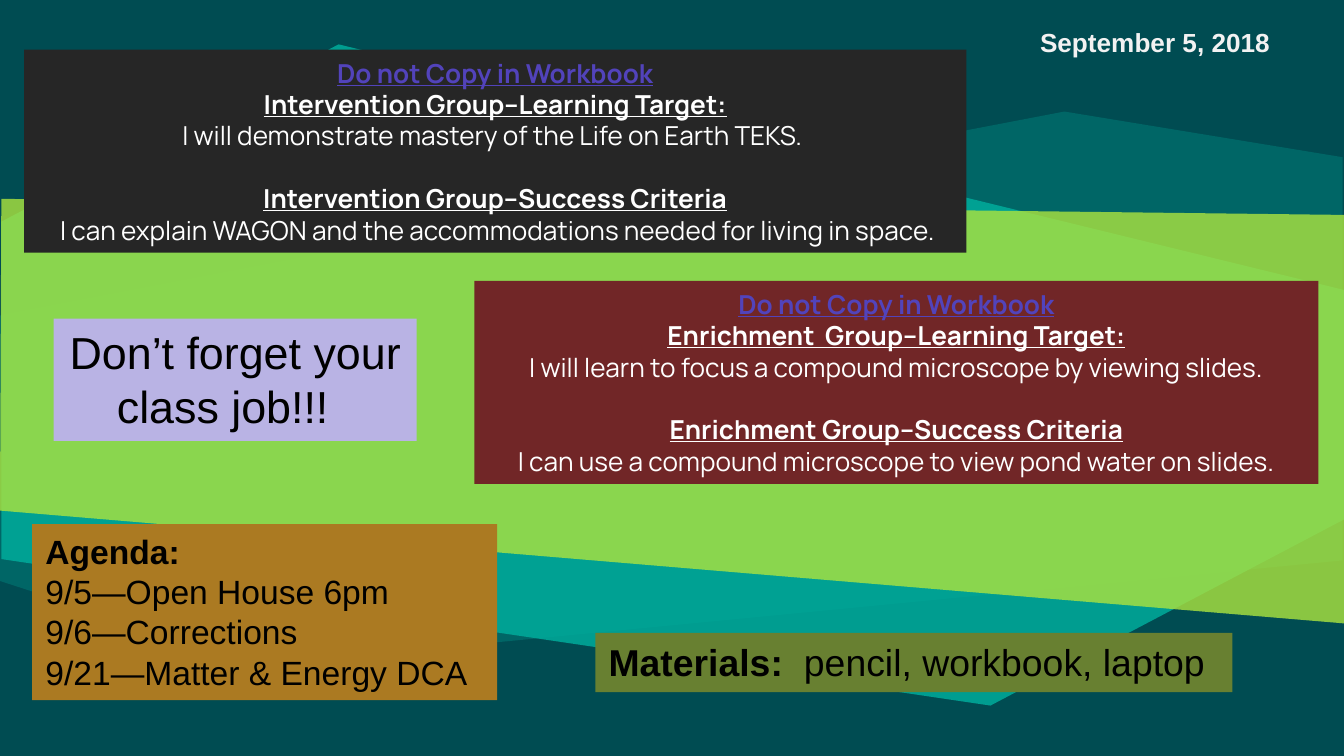
from pptx import Presentation
from pptx.dml.color import RGBColor
from pptx.enum.shapes import MSO_SHAPE
from pptx.enum.text import MSO_ANCHOR, PP_ALIGN
from pptx.util import Inches, Pt
from lxml import etree

RECTANGLE = MSO_SHAPE.RECTANGLE
TOP, MIDDLE = MSO_ANCHOR.TOP, MSO_ANCHOR.MIDDLE
LEFT, CENTER = PP_ALIGN.LEFT, PP_ALIGN.CENTER
DRAWING_NS = "http://schemas.openxmlformats.org/drawingml/2006/main"

COLORS = {
    "background": "004C52", "teal": "00AE9D", "lime": "ABE33F",
    "intervention": "262626", "enrichment": "712627", "agenda": "AB7A22",
    "materials": "688031", "reminder": "B9B3E4", "notice": "5243BB",
    "white": "FFFFFF", "date": "F2F2F2", "black": "000000",
}

# Background facets: colour, opacity in percent, corner points in inches
FACETS = [
    ("teal", 83, [(10.01, 2.16), (10.01, 3.86), (7.37, 5.25), (0.01, 4.16),
                  (0.01, 1.65), (2.52, 0.33)]),
    ("teal", 27, [(9.99, 1.17), (7.92, 0.83), (-0.01, 2.35), (-0.01, 4.32),
                  (1.93, 4.95), (9.99, 4.17)]),
    ("lime", 81, [(0.01, 1.48), (0, 3.8), (10.01, 4.64), (10.01, 1.6)]),
]


def rgb(name):
    return RGBColor.from_string(COLORS[name])


def add_facet(slide, color, opacity, points):
    """Draw one translucent polygon of the background."""
    corners = [(Inches(x), Inches(y)) for x, y in points]
    builder = slide.shapes.build_freeform(*corners[0])
    builder.add_line_segments(corners[1:], close=True)
    facet = builder.convert_to_shape()
    facet.shadow.inherit = False
    facet.line.fill.background()
    facet.fill.solid()
    facet.fill.fore_color.rgb = rgb(color)
    color_node = facet.fill._xPr.find(f".//{{{DRAWING_NS}}}srgbClr")
    alpha = etree.SubElement(color_node, f"{{{DRAWING_NS}}}alpha")
    alpha.set("val", str(opacity * 1000))


def add_panel(slide, box, fill=None, anchor=TOP, inset=(0.1, 0.05)):
    """Add a filled panel, or a bare text box, and return its text frame."""
    lengths = [Inches(length) for length in box]
    if fill:
        panel = slide.shapes.add_shape(RECTANGLE, *lengths)
        panel.shadow.inherit = False
        panel.fill.solid()
        panel.fill.fore_color.rgb = rgb(fill)
        panel.line.fill.background()
    else:
        panel = slide.shapes.add_textbox(*lengths)
    frame = panel.text_frame
    frame.word_wrap = True
    frame.vertical_anchor = anchor
    frame.margin_left = frame.margin_right = Inches(inset[0])
    frame.margin_top = frame.margin_bottom = Inches(inset[1])
    return frame


def add_run(paragraph, text, size, color="black", font="Arial", bold=False,
            underline=False):
    run = paragraph.add_run()
    run.text = text
    run.font.name = font
    run.font.size = Pt(size)
    run.font.color.rgb = rgb(color)
    run.font.bold = bold
    run.font.underline = underline


def add_group_goals(slide, box, fill, target_title, target, criteria_title,
                    criteria):
    """Learning target and success criteria of one student group."""
    frame = add_panel(slide, box, fill, MIDDLE, (0.1, 0.1))
    lines = [
        ("Do not Copy in Workbook", "notice", True),
        (target_title, "white", True),
        (target, "white", False),
        (criteria_title, "white", True),
        (criteria, "white", False),
    ]
    for index, (text, color, heading) in enumerate(lines):
        paragraph = frame.paragraphs[0] if index == 0 else frame.add_paragraph()
        paragraph.alignment = CENTER
        if text == criteria_title:
            paragraph.space_before = Pt(16.8)
        add_run(paragraph, text, 14, color, "Manrope", heading, heading)


def add_date(slide, box, date):
    add_run(add_panel(slide, box).paragraphs[0], date, 14, "date", bold=True)


def add_agenda(slide, box, title, entries):
    frame = add_panel(slide, box, "agenda")
    for index, text in enumerate([title, *entries]):
        paragraph = frame.paragraphs[0] if index == 0 else frame.add_paragraph()
        paragraph.alignment = LEFT
        add_run(paragraph, text, 18, bold=index == 0)


def add_materials(slide, box, label, items):
    paragraph = add_panel(slide, box, "materials").paragraphs[0]
    paragraph.alignment = LEFT
    add_run(paragraph, label, 20, bold=True)
    add_run(paragraph, items, 20)


def add_reminder(slide, box, text):
    paragraph = add_panel(slide, box, "reminder").paragraphs[0]
    paragraph.alignment = CENTER
    add_run(paragraph, text, 24)


def main():
    deck = Presentation()
    # Widescreen, 16:9
    deck.slide_width = Inches(10)
    deck.slide_height = Inches(10 * 9 / 16)
    slide = deck.slides.add_slide(deck.slide_layouts[6])
    slide.background.fill.solid()
    slide.background.fill.fore_color.rgb = rgb("background")
    for facet in FACETS:
        add_facet(slide, *facet)

    add_group_goals(
        slide, (0.18, 0.37, 7.01, 1.51), "intervention",
        "Intervention Group--Learning Target:",
        "I will demonstrate mastery of the Life on Earth TEKS. ",
        "Intervention Group--Success Criteria",
        " I can explain WAGON and the accommodations needed for living in space.")
    add_date(slide, (7.64, 0.15, 1.97, 0.34), "September 5, 2018")
    add_group_goals(
        slide, (3.53, 2.09, 6.28, 1.51), "enrichment",
        "Enrichment  Group--Learning Target:",
        "I will learn to focus a compound microscope by viewing slides.",
        "Enrichment Group--Success Criteria",
        "I can use a compound microscope to view pond water on slides.")
    add_agenda(slide, (0.24, 3.9, 3.46, 1.31), "Agenda:",
               ["9/5—Open House 6pm", "9/6—Corrections",
                "9/21—Matter & Energy DCA"])
    add_materials(slide, (4.43, 4.71, 4.74, 0.44), "Materials:  ",
                  "pencil, workbook, laptop")
    add_reminder(slide, (0.4, 2.37, 2.7, 0.91),
                 "Don’t forget your  class job!!!   ")
    deck.save("out.pptx")


if __name__ == "__main__":
    main()
